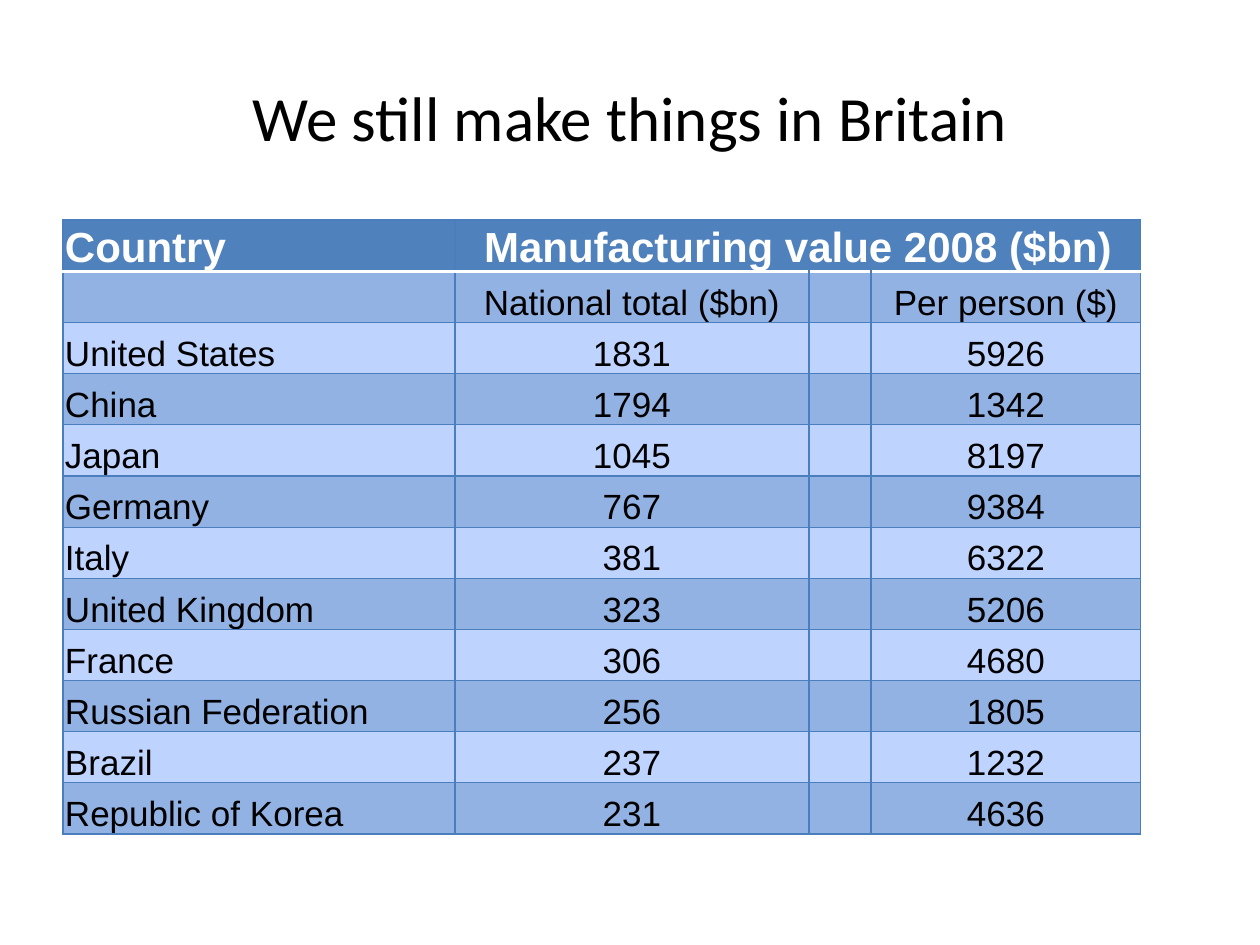
from lxml import etree
from pptx import Presentation
from pptx.dml.color import RGBColor
from pptx.enum.text import MSO_ANCHOR as Anchor, PP_ALIGN as Align
from pptx.oxml.ns import qn
from pptx.util import Emu, Pt

PX = 914400 // 126
BLACK = RGBColor(0x00, 0x00, 0x00)
WHITE = RGBColor(0xFF, 0xFF, 0xFF)
HEADER_BLUE = RGBColor(0x4F, 0x81, 0xBD)
DARK_BAND = RGBColor(0x93, 0xB2, 0xE4)
LIGHT_BAND = RGBColor(0xBF, 0xD3, 0xFF)
GRID_BLUE = RGBColor(0x4B, 0x7E, 0xBC)

TITLE = "We still make things in Britain"
ROWS = [
    ("Country", "Manufacturing value 2008 ($bn)", "", ""),
    ("", "National total ($bn)", "", "Per person ($)"),
    ("United States", "1831", "", "5926"),
    ("China", "1794", "", "1342"),
    ("Japan", "1045", "", "8197"),
    ("Germany", "767", "", "9384"),
    ("Italy", "381", "", "6322"),
    ("United Kingdom", "323", "", "5206"),
    ("France", "306", "", "4680"),
    ("Russian Federation", "256", "", "1805"),
    ("Brazil", "237", "", "1232"),
    ("Republic of Korea", "231", "", "4636"),
]
COLUMN_WIDTHS = [392, 354, 62, 270]
TITLE_BOX = (63, 38, 1134, 157)
TABLE_LEFT, TABLE_TOP, TABLE_HEIGHT = 63, 220, 614

TITLE_FONT = {"name": "Calibri", "size": Pt(36), "bold": False}
HEADER_FONT = {"name": "Arial", "size": Pt(24), "bold": True}
BODY_FONT = {"name": "Arial", "size": Pt(20), "bold": False}
CELL_FORMAT = {
    "margin_left": Emu(2 * PX),
    "margin_right": Emu(2 * PX),
    "margin_top": Emu(PX),
    "margin_bottom": Emu(0),
    "vertical_anchor": Anchor.BOTTOM,
}
GRID_LINE = (GRID_BLUE, 0.75)
HEADER_RULE = (WHITE, 2)


def px(*lengths):
    return [Emu(length * PX) for length in lengths]


def apply(target, formats):
    for name, value in formats.items():
        setattr(target, name, value)


def write(frame, text, font, color, align):
    para = frame.paragraphs[0]
    para.alignment = align
    span = para.add_run()
    span.text = text
    apply(span.font, font)
    span.font.color.rgb = color


def set_borders(cell, lines):
    """Add the four side lines, which must stand before the cell's fill."""
    properties = cell._tc.get_or_add_tcPr()
    for index, (side, (color, width)) in enumerate(lines.items()):
        line = etree.Element(qn(f"a:ln{side}"), w=str(Pt(width)))
        fill = etree.SubElement(line, qn("a:solidFill"))
        etree.SubElement(fill, qn("a:srgbClr"), val=str(color))
        properties.insert(index, line)


def add_title(page):
    box = page.shapes.add_textbox(*px(*TITLE_BOX))
    frame = box.text_frame
    frame.word_wrap = True
    frame.vertical_anchor = Anchor.MIDDLE
    write(frame, TITLE, TITLE_FONT, BLACK, Align.CENTER)


def add_country_table(page):
    place = px(TABLE_LEFT, TABLE_TOP, sum(COLUMN_WIDTHS), TABLE_HEIGHT)
    table = page.shapes.add_table(len(ROWS), len(COLUMN_WIDTHS), *place).table
    for column, width in zip(table.columns, px(*COLUMN_WIDTHS)):
        column.width = width
    for row in table.rows:
        row.height = Emu(TABLE_HEIGHT * PX // len(ROWS))
    table.cell(0, 1).merge(table.cell(0, 3))

    for r, texts in enumerate(ROWS):
        is_header = r == 0
        band = HEADER_BLUE if is_header else DARK_BAND if r % 2 else LIGHT_BAND
        font, color = (HEADER_FONT, WHITE) if is_header else (BODY_FONT, BLACK)
        lines = dict.fromkeys("LRTB", GRID_LINE)
        if r < 2:
            lines["B" if is_header else "T"] = HEADER_RULE
        for c, text in enumerate(texts):
            cell = table.cell(r, c)
            apply(cell, CELL_FORMAT)
            cell.fill.solid()
            cell.fill.fore_color.rgb = band
            set_borders(cell, lines)
            if text:
                align = Align.CENTER if c else Align.LEFT
                write(cell.text_frame, text, font, color, align)


def main():
    deck = Presentation()
    deck.slide_width, deck.slide_height = px(1260, 945)
    page = deck.slides.add_slide(deck.slide_layouts[6])
    add_title(page)
    add_country_table(page)
    deck.save("out.pptx")


if __name__ == "__main__":
    main()
